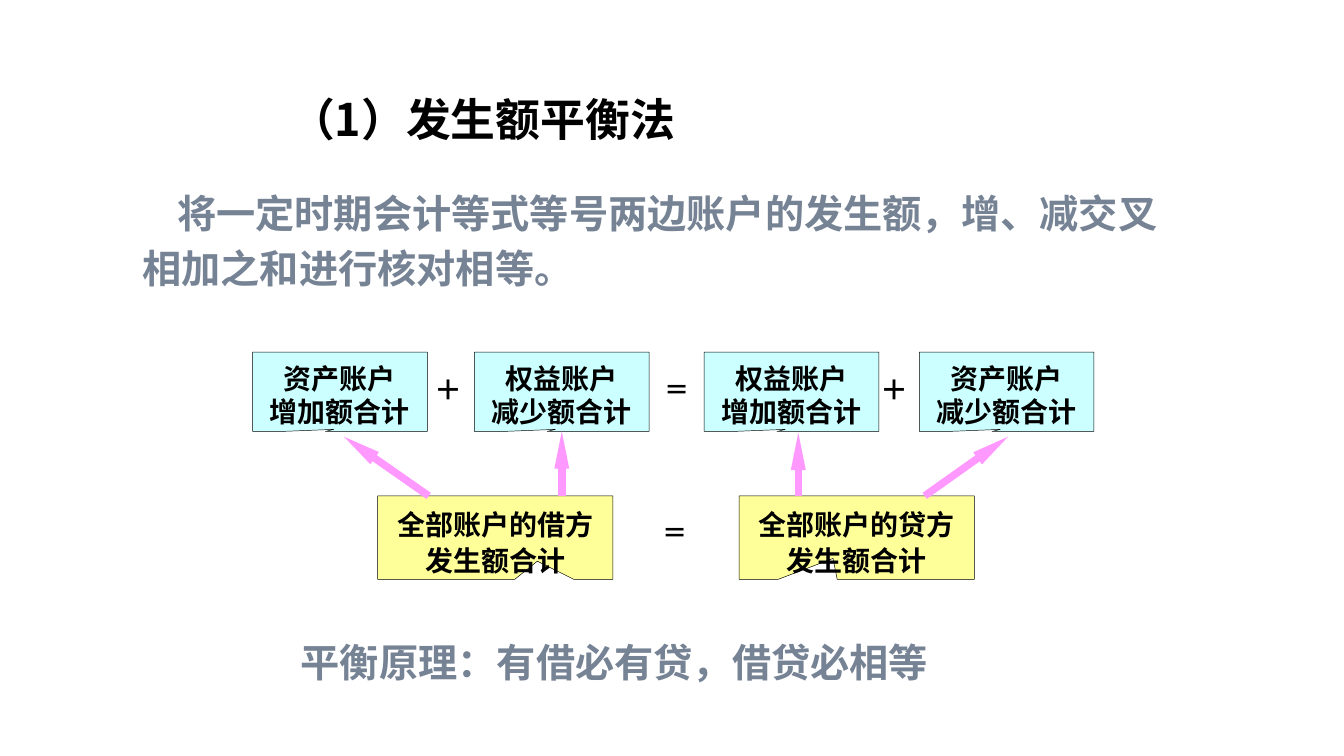
from pptx import Presentation
from pptx.dml.color import RGBColor
from pptx.enum.shapes import MSO_CONNECTOR, MSO_SHAPE
from pptx.enum.text import MSO_ANCHOR, PP_ALIGN
from pptx.oxml.ns import qn
from pptx.util import Inches, Pt
from lxml.etree import SubElement

SANS, SERIF = "Noto Sans CJK SC", "Times New Roman"
BLACK, GREY, CYAN, YELLOW, PINK = "000000", "768395", "CCFFFF", "FFFF99", "FF99FF"

TITLE = "（1）发生额平衡法"
INTRO = "将一定时期会计等式等号两边账户的发生额，增、减交叉相加之和进行核对相等。"
RULE = "平衡原理：有借必有贷，借贷必相等"

# left edge, lines
ACCOUNTS = [
    (1.88, ["资产账户", "增加额合计"]),
    (3.53, ["权益账户", "减少额合计"]),
    (5.24, ["权益账户", "增加额合计"]),
    (6.84, ["资产账户", "减少额合计"]),
]
# left edge, text, callout tip
TOTALS = [
    (2.81, "全部账户的借方发生额合计", (0.179, 0.283)),
    (5.5, "全部账户的贷方发生额合计", (-0.101, 0.25)),
]
# box, callout tip, sign, size, font
SIGNS = [
    ((3.1, 2.78, 0.47, 0.24), (0.048, 0.395), "＋", 15, SERIF),
    ((4.71, 2.75, 0.65, 0.29), (-0.438, 0.854), "＝", 13.5, "Roboto"),
    ((6.42, 2.78, 0.47, 0.24), (0.048, 0.395), "＋", 15, SERIF),
    ((4.73, 3.79, 0.59, 0.35), (0.132, 0.243), "＝", 13.5, SERIF),
]
# start x, end x, end y, index of the account box it joins
ARROWS = [
    (3.19, 2.56, 3.25, None),
    (4.18, 4.18, 3.21, 1),
    (5.94, 5.94, 3.22, None),
    (6.88, 7.5, 3.25, None),
]
TOP, WIDE, HIGH = 2.62, 1.3, 0.59
SUM_TOP, SUM_WIDE, SUM_HIGH = 3.69, 1.75, 0.62


def color(code):
    return RGBColor.from_string(code)


def write(shape, lines, size, font=SANS, ink=BLACK, align=PP_ALIGN.LEFT,
          anchor=MSO_ANCHOR.TOP, space=None, pads=(0.05, 0.05)):
    frame = shape.text_frame
    frame.word_wrap = True
    frame.vertical_anchor = anchor
    frame.margin_top, frame.margin_bottom = map(Inches, pads)
    for i, line in enumerate(lines):
        para = frame.add_paragraph() if i else frame.paragraphs[0]
        para.alignment = align
        if space:
            para.line_spacing = space
        run = para.add_run()
        run.text = line
        run.font.size = Pt(size)
        run.font.bold = True
        run.font.name = font
        run.font.color.rgb = color(ink)
        SubElement(run.font._element, qn("a:ea"), typeface=SANS)


def add_text(shapes, box, text, size, **style):
    shape = shapes.add_textbox(*map(Inches, box))
    write(shape, [text], size, **style)
    return shape


def add_box(shapes, box, tip, lines, size=15, font=SERIF, fill=None,
            space=None, pads=(0.05, 0)):
    """Callout with centred text; without a fill it has no outline either."""
    shape = shapes.add_shape(MSO_SHAPE.RECTANGULAR_CALLOUT, *map(Inches, box))
    shape.adjustments[0], shape.adjustments[1] = tip
    shape.shadow.inherit = False
    if fill:
        shape.fill.solid()
        shape.fill.fore_color.rgb = color(fill)
        shape.line.color.rgb = color(BLACK)
        shape.line.width = Pt(0.25)
    else:
        shape.fill.background()
        shape.line.fill.background()
    write(shape, lines, size, font, align=PP_ALIGN.CENTER,
          anchor=MSO_ANCHOR.MIDDLE, space=space, pads=pads)
    return shape


def add_arrow(shapes, start, end, high, target):
    """Arrow from the totals row up to an account box."""
    arrow = shapes.add_connector(MSO_CONNECTOR.STRAIGHT, Inches(start),
                                 Inches(SUM_TOP), Inches(end), Inches(high))
    if target:
        arrow.end_connect(target, 2)
    arrow.line.color.rgb = color(PINK)
    arrow.line.width = Pt(4)
    SubElement(arrow.line._get_or_add_ln(), qn("a:tailEnd"),
               type="triangle", w="sm", len="lg")
    SubElement(arrow._element.spPr, qn("a:effectLst"))


def main():
    deck = Presentation()
    deck.slide_width = Inches(10)
    deck.slide_height = deck.slide_width * 9 // 16
    shapes = deck.slides.add_slide(deck.slide_layouts[6]).shapes

    add_text(shapes, (2.06, 0.24, 6.39, 0.89), TITLE, 24,
             anchor=MSO_ANCHOR.BOTTOM)
    intro = add_text(shapes, (0.96, 1.31, 7.85, 0.94), INTRO, 21,
                     ink=GREY, space=Pt(29))
    props = intro.text_frame.paragraphs[0]._p.get_or_add_pPr()
    props.set("indent", str(Inches(0.26)))

    boxes = [add_box(shapes, (x, TOP, WIDE, HIGH), (-0.036, 0.474), lines,
                     fill=CYAN, space=Pt(17.7))
             for x, lines in ACCOUNTS]
    for x, text, tip in TOTALS:
        add_box(shapes, (x, SUM_TOP, SUM_WIDE, SUM_HIGH), tip, [text],
                fill=YELLOW, space=Pt(19.2))
    for box, tip, sign, size, font in SIGNS:
        add_box(shapes, box, tip, [sign], size, font, pads=(0, 0))
    for start, end, high, index in ARROWS:
        add_arrow(shapes, start, end, high, boxes[index] if index else None)

    add_text(shapes, (2.14, 4.7, 5.67, 0.45), RULE, 21, ink=GREY,
             anchor=MSO_ANCHOR.MIDDLE)
    deck.save("out.pptx")


if __name__ == "__main__":
    main()
